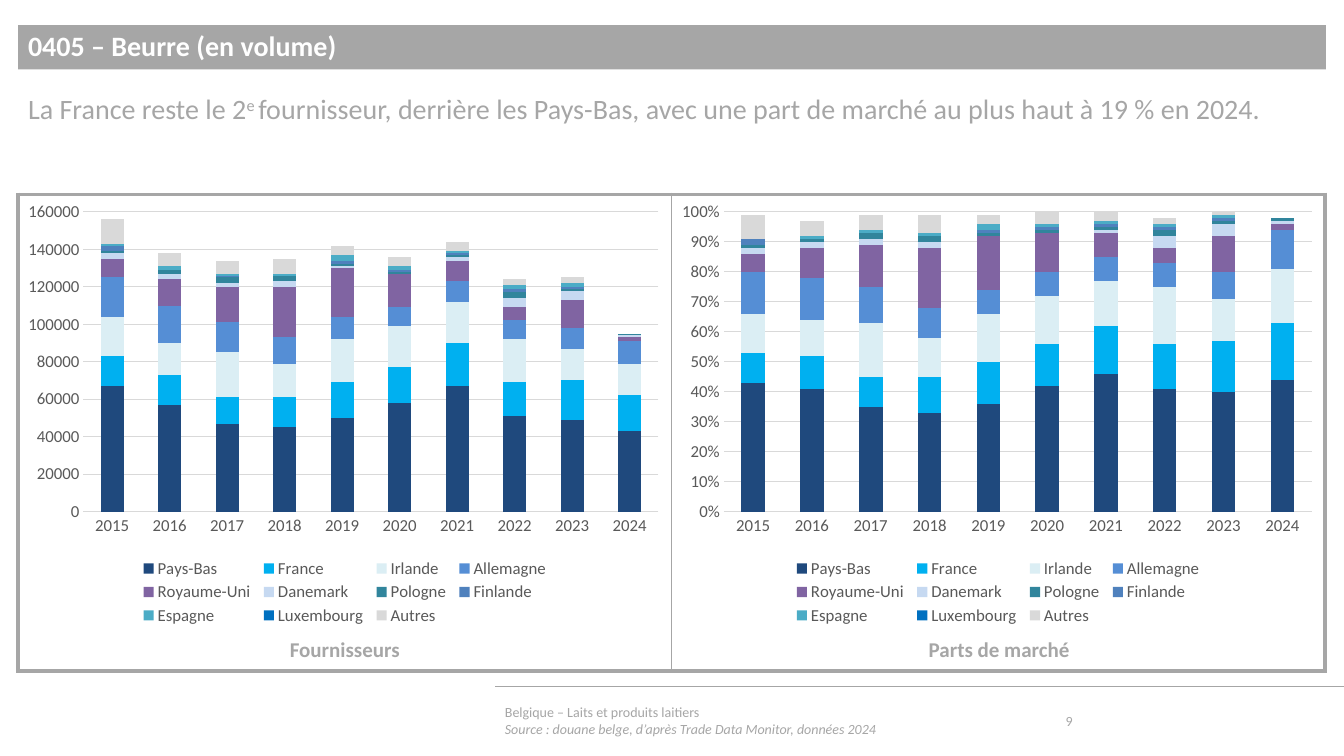
from lxml import etree
from pptx import Presentation
from pptx import util as u
from pptx.chart.data import CategoryChartData
from pptx.dml.color import RGBColor
from pptx.enum import chart as ch, shapes, text
from pptx.oxml import parse_xml
from pptx.oxml.ns import nsdecls, qn

PX = 9144
FONT = "Calibri"
GREY = RGBColor(0xA6, 0xA6, 0xA6)
WHITE = RGBColor(0xFF, 0xFF, 0xFF)
LABEL = RGBColor(0x59, 0x59, 0x59)
GRID = RGBColor(0xD9, 0xD9, 0xD9)
NAVY = RGBColor(0x1F, 0x49, 0x7D)
SKY = RGBColor(0x00, 0xB0, 0xF0)
ICE = RGBColor(0xDB, 0xEE, 0xF4)
BLUE = RGBColor(0x55, 0x8E, 0xD5)
PURPLE = RGBColor(0x80, 0x64, 0xA2)
PALE = RGBColor(0xC6, 0xD9, 0xF1)
TEAL = RGBColor(0x31, 0x85, 0x9C)
STEEL = RGBColor(0x4F, 0x81, 0xBD)
AQUA = RGBColor(0x4B, 0xAC, 0xC6)
COBALT = RGBColor(0x00, 0x70, 0xC0)

YEARS = [str(y) for y in range(2015, 2025)]
SUPPLIERS = {
    "Pays-Bas": (NAVY, [67, 57, 47, 45, 50, 58, 67, 51, 49, 43],
                 [43, 41, 35, 33, 36, 42, 46, 41, 40, 44]),
    "France": (SKY, [16, 16, 14, 16, 19, 19, 23, 18, 21, 19],
               [10, 11, 10, 12, 14, 14, 16, 15, 17, 19]),
    "Irlande": (ICE, [21, 17, 24, 18, 23, 22, 22, 23, 17, 17],
                [13, 12, 18, 13, 16, 16, 15, 19, 14, 18]),
    "Allemagne": (BLUE, [21, 20, 16, 14, 12, 10, 11, 10, 11, 12],
                  [14, 14, 12, 10, 8, 8, 8, 8, 9, 13]),
    "Royaume-Uni": (PURPLE, [10, 14, 19, 27, 26, 18, 11, 7, 15, 2],
                    [6, 10, 14, 20, 18, 13, 8, 5, 12, 2]),
    "Danemark": (PALE, [3, 3, 2, 3, 1, 0, 2, 5, 5, 1],
                 [2, 2, 2, 2, 0, 0, 1, 4, 4, 1]),
    "Pologne": (TEAL, [1, 2, 3, 3, 1, 1, 1, 3, 1, 1],
                [1, 1, 2, 2, 1, 1, 1, 2, 1, 1]),
    "Finlande": (STEEL, [3, 0, 1, 0, 2, 1, 1, 2, 1, 0],
                 [2, 0, 0, 0, 1, 1, 1, 1, 1, 0]),
    "Espagne": (AQUA, [1, 2, 1, 1, 3, 2, 1, 2, 2, 0],
                [0, 1, 1, 1, 2, 1, 1, 1, 1, 0]),
    "Luxembourg": (COBALT, [0] * 10, [0] * 10),
    "Autres": (GRID, [13, 7, 7, 8, 5, 5, 5, 3, 3, 0],
               [8, 5, 5, 6, 3, 4, 3, 2, 2, 0]),
}


def px(*lengths):
    return [n * PX for n in lengths]


def apply(obj, values):
    for name, value in values.items():
        setattr(obj, name, value)


def style_font(font, size, color, **extra):
    apply(font, dict(name=FONT, size=u.Pt(size), **extra))
    font.color.rgb = color


def write(sp, paragraphs, size, color=GREY, anchor=text.MSO_ANCHOR.TOP, **para):
    tf = sp.text_frame
    apply(tf, dict(word_wrap=True, vertical_anchor=anchor))
    for i, runs in enumerate(paragraphs):
        p = tf.paragraphs[0] if i == 0 else tf.add_paragraph()
        apply(p, para)
        for words, extra in runs:
            r = p.add_run()
            r.text = words
            extra = dict(extra)
            baseline = extra.pop("baseline", None)
            style_font(r.font, size, color, **extra)
            if baseline:
                r._r.get_or_add_rPr().set("baseline", baseline)


def add_text(s, box, paragraphs, size, **options):
    write(s.shapes.add_textbox(*px(*box)), paragraphs, size, **options)


def add_banner(s, box, words):
    sp = s.shapes.add_shape(shapes.MSO_SHAPE.RECTANGLE, *px(*box))
    sp.shadow.inherit = False
    sp.fill.solid()
    sp.fill.fore_color.rgb = GREY
    sp.line.fill.background()
    write(sp, [[(words, dict(bold=True))]], 20, WHITE, text.MSO_ANCHOR.MIDDLE,
          alignment=text.PP_ALIGN.LEFT, line_spacing=0.9)


def add_rule(s, *ends):
    c = s.shapes.add_connector(shapes.MSO_CONNECTOR.STRAIGHT, *px(*ends))
    c.line.color.rgb = GREY
    c.line.width = u.Pt(0.5)
    etree.SubElement(c._element.spPr, qn("a:effectLst"))


def add_frame(s, box):
    tbl = s.shapes.add_table(1, 2, *px(*box)).table
    apply(tbl, dict(first_row=False, horz_banding=False))
    for cell, left, right in zip(tbl.rows[0].cells, (3, 1), (1, 3)):
        tcPr = cell._tc.get_or_add_tcPr()
        for side, width in zip("LRTB", (left, right, 3, 3)):
            tcPr.append(parse_xml(
                f'<a:ln{side} {nsdecls("a")} w="{u.Pt(width)}"><a:solidFill>'
                f'<a:srgbClr val="{GREY}"/></a:solidFill></a:ln{side}>'))
        cell.fill.background()


def set_layout(parent, index, x, y, w, h, target=""):
    for old in parent.findall(qn("c:layout")):
        parent.remove(old)
    values = dict(xMode="edge", yMode="edge", x=x, y=y, w=w, h=h)
    inner = "".join(f'<c:{k} val="{v}"/>' for k, v in values.items())
    parent.insert(index, parse_xml(
        f'<c:layout {nsdecls("c")}><c:manualLayout>{target}{inner}'
        f'</c:manualLayout></c:layout>'))


def add_stack(s, box, column, factor, fmt, top, step, plot_x, plot_w):
    data = CategoryChartData(number_format=fmt)
    data.categories = YEARS
    for name, supplier in SUPPLIERS.items():
        data.add_series(name, [round(v * factor, 2) for v in supplier[column]])
    chart = s.shapes.add_chart(ch.XL_CHART_TYPE.COLUMN_STACKED, *px(*box), data).chart
    apply(chart, dict(has_title=False, has_legend=True))
    style_font(chart.font, 12, LABEL)
    plot = chart.plots[0]
    apply(plot, dict(gap_width=150, overlap=100, vary_by_categories=False))
    for series, supplier in zip(plot.series, SUPPLIERS.values()):
        series.format.fill.solid()
        series.format.fill.fore_color.rgb = supplier[0]

    values = chart.value_axis
    apply(values, dict(minimum_scale=0, maximum_scale=top, major_unit=step))
    apply(values.tick_labels, dict(number_format=fmt, number_format_is_linked=False))
    for axis in (chart.category_axis, values):
        apply(axis, dict(major_tick_mark=ch.XL_TICK_MARK.NONE,
                         minor_tick_mark=ch.XL_TICK_MARK.NONE))
        style_font(axis.tick_labels.font, 12, LABEL)
    values.format.line.fill.background()
    for line in (chart.category_axis.format.line, values.major_gridlines.format.line):
        line.color.rgb = GRID
        line.width = u.Pt(0.75)

    legend = chart.legend
    apply(legend, dict(position=ch.XL_LEGEND_POSITION.BOTTOM, include_in_layout=False))
    style_font(legend.font, 12, LABEL)
    set_layout(legend._element, 1, 0.18, 0.83, 0.64, 0.17)
    plot_area = chart._chartSpace.find(".//" + qn("c:plotArea"))
    set_layout(plot_area, 0, plot_x, 0.04, plot_w, 0.69,
               '<c:layoutTarget val="inner"/>')


def main():
    prs = Presentation()
    apply(prs, dict(slide_width=1333 * PX, slide_height=750 * PX))
    s = prs.slides.add_slide(prs.slide_layouts[6])

    add_rule(s, 1333, 681, 491, 681)
    add_frame(s, (18, 193, 1296, 473))
    for left, caption in ((18, "Fournisseurs"), (667, "Parts de marché")):
        add_text(s, (left, 627, 648, 35), [[(caption, dict(bold=True))]], 15,
                 alignment=text.PP_ALIGN.CENTER)
    add_text(s, (491, 695, 543, 40),
             [[("Belgique – Laits et produits laitiers", {})],
              [("Source : douane belge, d’après Trade Data Monitor, données 2024",
                dict(italic=True))]],
             10, anchor=text.MSO_ANCHOR.MIDDLE)
    add_text(s, (1047, 695, 99, 40), [[("9", {})]], 10, anchor=text.MSO_ANCHOR.MIDDLE)

    add_banner(s, (18, 25, 1297, 44), "0405 – Beurre (en volume)")
    add_text(s, (18, 90, 1296, 81),
             [[("La France reste le 2", {}), ("e ", dict(baseline="30000")),
               ("fournisseur, derrière les Pays-Bas, avec une part de marché "
                "au plus haut à 19 % en 2024.", {})]],
             20, line_spacing=0.9)

    add_stack(s, (18, 193, 648, 431), 1, 1000, "General", 160000, 20000, 0.1, 0.88)
    add_stack(s, (666, 193, 648, 431), 2, 0.01, "0%", 1, 0.1, 0.08, 0.9)
    prs.save("out.pptx")


if __name__ == "__main__":
    main()
